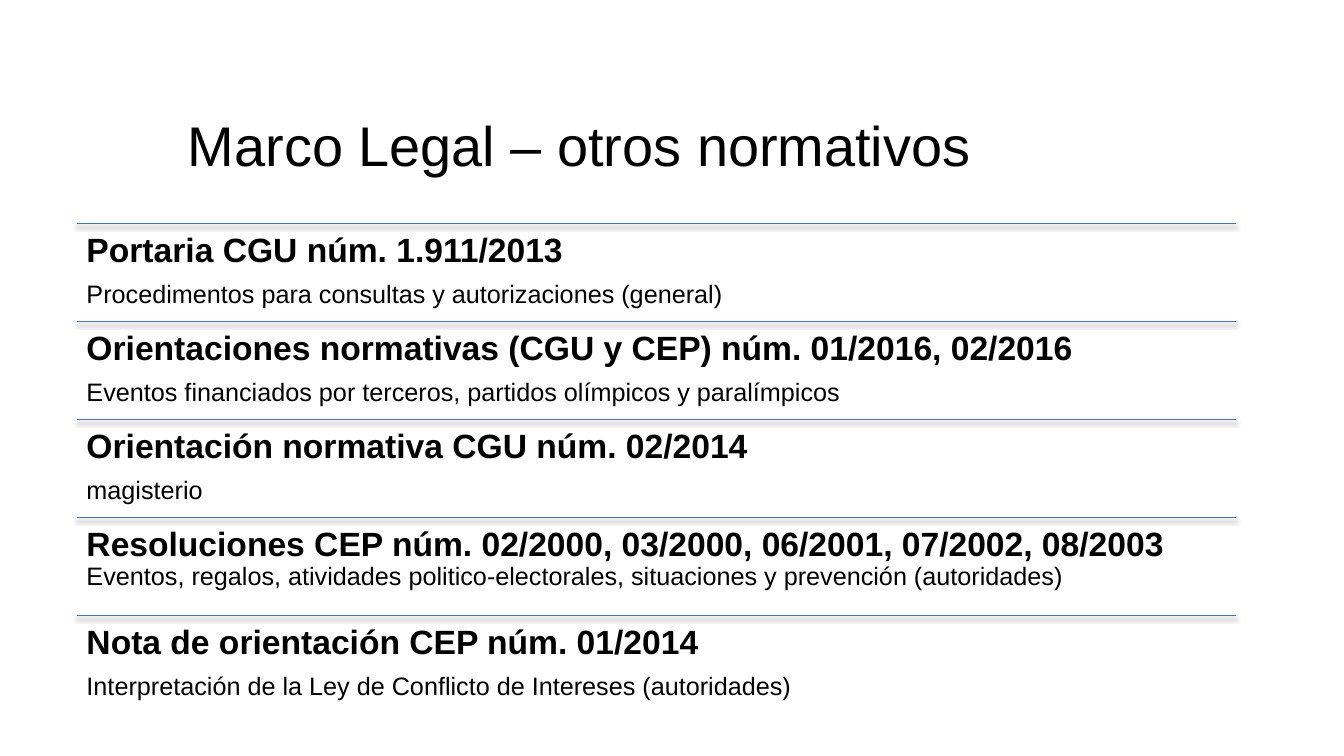
from dataclasses import dataclass

from lxml.etree import SubElement
from pptx import Presentation
from pptx.dml.color import RGBColor
from pptx.enum.shapes import MSO_CONNECTOR
from pptx.enum.text import MSO_ANCHOR, PP_ALIGN
from pptx.oxml.ns import qn
from pptx.util import Inches, Pt

LEFT, WIDTH = 0.76, 11.5
TOP, LAST = 2.22, 6.11
FONT, BLACK, BLUE = "Arial", "000000", "4875AC"


@dataclass
class Norm:
    head: str
    note: str
    joined: bool = False


NORMS = [
    Norm("Portaria CGU núm. 1.911/2013",
         "Procedimentos para consultas y autorizaciones (general)"),
    Norm("Orientaciones normativas (CGU y CEP) núm. 01/2016, 02/2016",
         "Eventos financiados por terceros, partidos olímpicos y paralímpicos"),
    Norm("Orientación normativa CGU núm. 02/2014", "magisterio"),
    Norm("Resoluciones CEP núm. 02/2000, 03/2000, 06/2001, 07/2002, 08/2003",
         "Eventos, regalos, atividades politico-electorales, situaciones "
         "y prevención (autoridades)", joined=True),
    Norm("Nota de orientación CEP núm. 01/2014",
         "Interpretación de la Ley de Conflicto de Intereses (autoridades)"),
]
ROW = (LAST - TOP) / (len(NORMS) - 1)


def color(code: str) -> RGBColor:
    return RGBColor.from_string(code)


def write(para, text: str, *, size: float, bold: bool = False,
          after: float = 0, align=PP_ALIGN.LEFT) -> None:
    para.line_spacing = 0.9
    para.space_before = Pt(0)
    para.space_after = Pt(after)
    para.alignment = align
    run = para.add_run()
    run.text = text
    font = run.font
    font.name, font.size, font.bold = FONT, Pt(size), bold
    font.color.rgb = color(BLACK)


def shade(line) -> None:
    """Give the line a soft shadow straight below it."""
    effects = SubElement(line._element.spPr, qn("a:effectLst"))
    shadow = SubElement(effects, qn("a:outerShdw"), blurRad=str(Pt(3.1)),
                        dist=str(Pt(1.8)), dir="5400000", rotWithShape="0")
    tint = SubElement(shadow, qn("a:srgbClr"), val=BLACK)
    SubElement(tint, qn("a:alpha"), val="35000")


def rule(slide, top: float) -> None:
    line = slide.shapes.add_connector(
        MSO_CONNECTOR.STRAIGHT, Inches(LEFT), Inches(top),
        Inches(LEFT + WIDTH), Inches(top))
    line.line.color.rgb = color(BLUE)
    line.line.width = Pt(0.75)
    shade(line)


def entry(slide, norm: Norm, top: float) -> None:
    box = slide.shapes.add_textbox(
        Inches(LEFT), Inches(top), Inches(WIDTH), Inches(ROW))
    frame = box.text_frame
    frame.word_wrap = True
    frame.margin_left = frame.margin_right = Inches(0.1)
    frame.margin_top = frame.margin_bottom = Inches(0.1)
    para = frame.paragraphs[0]
    write(para, norm.head, size=24, bold=True, after=8.4)
    if norm.joined:
        write(para, " ", size=22)
    else:
        para = frame.add_paragraph()
    write(para, norm.note, size=18)


def heading(slide, text: str) -> None:
    title = slide.shapes.title
    title.left, title.top = Inches(0), Inches(1.12)
    title.width, title.height = Inches(WIDTH), Inches(1.3)
    frame = title.text_frame
    frame.vertical_anchor = MSO_ANCHOR.TOP
    write(frame.paragraphs[0], text, size=39.9, align=PP_ALIGN.CENTER)


def main() -> None:
    deck = Presentation()
    deck.slide_width, deck.slide_height = Inches(13.33), Inches(7.5)
    slide = deck.slides.add_slide(deck.slide_layouts[5])
    heading(slide, "Marco Legal – otros normativos")
    for i, norm in enumerate(NORMS):
        top = TOP + i * ROW
        rule(slide, top)
        entry(slide, norm, top)
    deck.save("out.pptx")


if __name__ == "__main__":
    main()
